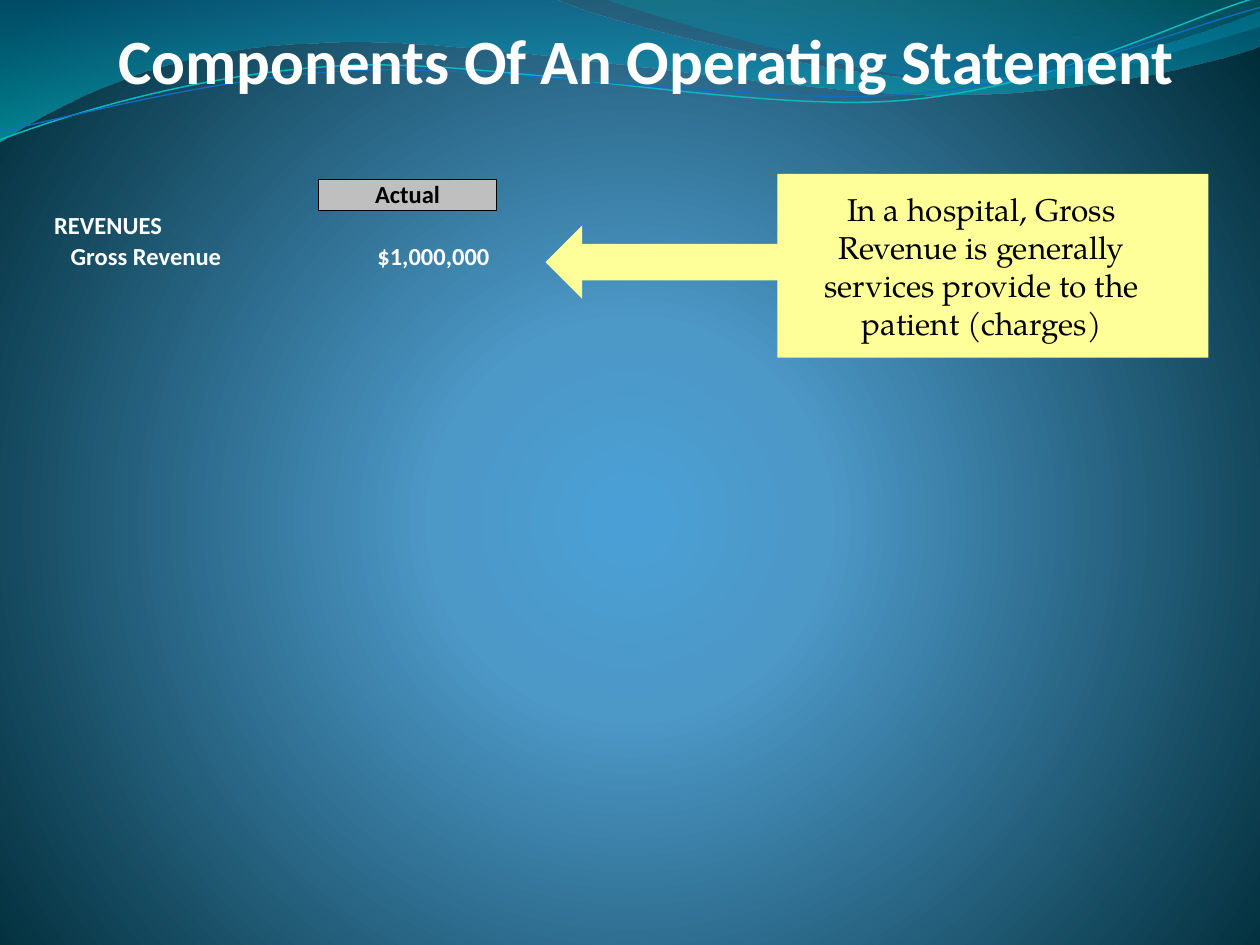
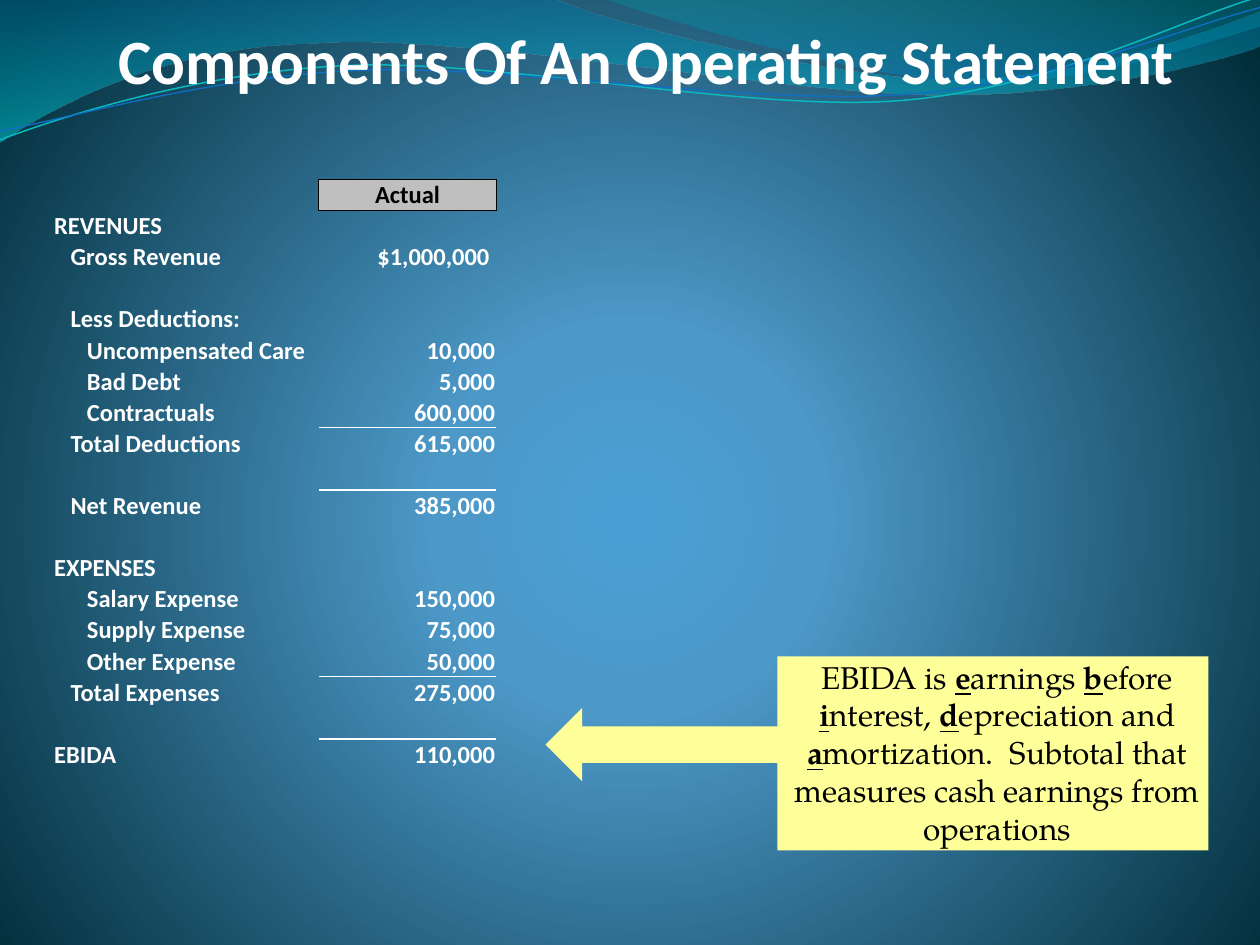
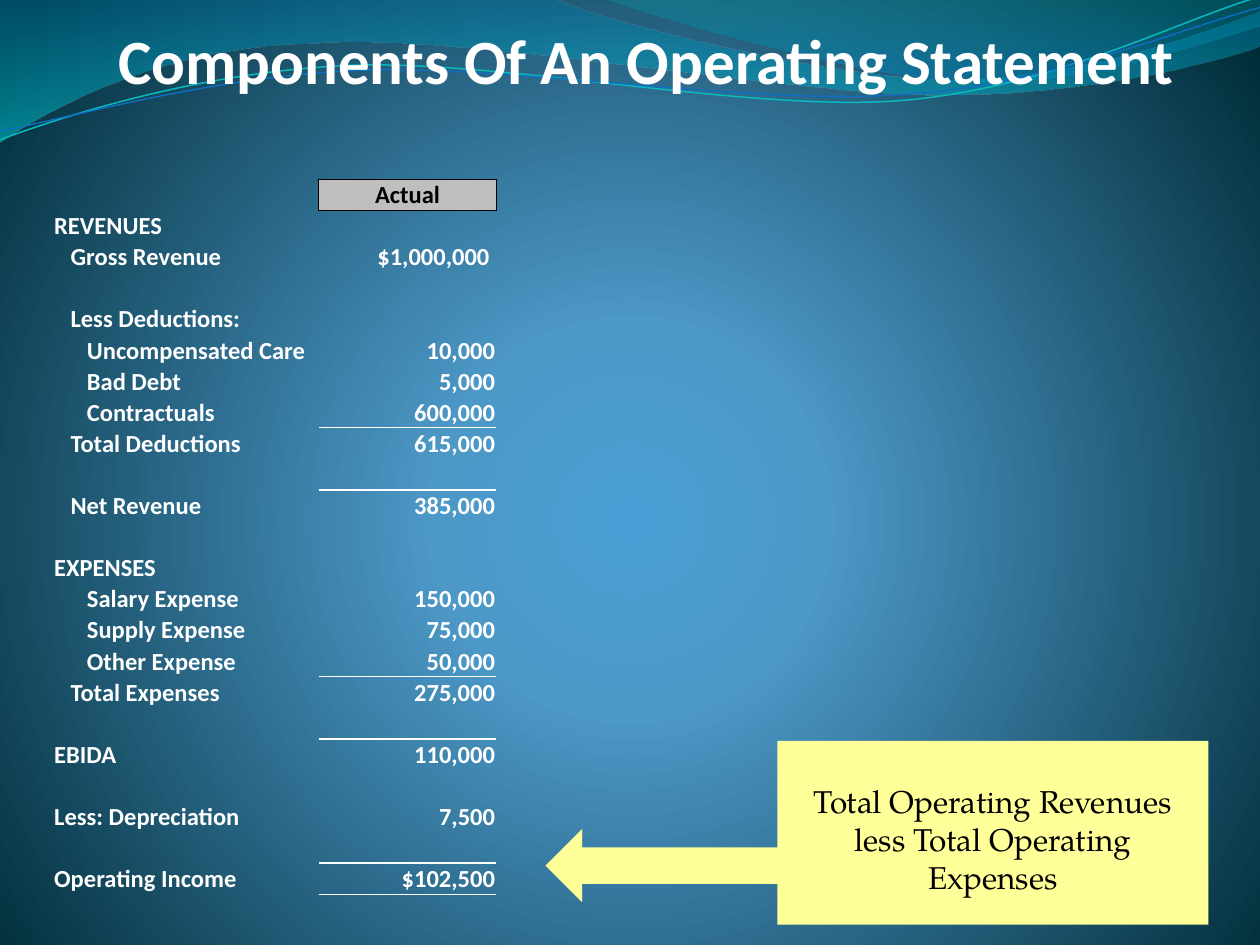
import pptx
import pptx.util
import pptx.oxml
import pptx.oxml.ns
import pptx.dml.color
import pptx.enum.shapes
import pptx.enum.text
import lxml.etree
from dataclasses import dataclass

Inches = pptx.util.Inches
Align = pptx.enum.text.PP_ALIGN
Anchor = pptx.enum.text.MSO_ANCHOR
Preset = pptx.enum.shapes.MSO_SHAPE
qn = pptx.oxml.ns.qn


@dataclass(frozen=True)
class Theme:
    light: str = "FFFFFF"
    dark: str = "000000"
    header: str = "BFBFBF"
    callout: str = "FFFF99"
    sans: str = "Calibri"
    serif: str = "TeX Gyre Pagella"
    title_size: int = 36
    table_size: int = 14
    callout_size: int = 18
    backdrop: tuple = ((0, "4AA0D6", 100), (25, "4C98C7", 100), (100, "002C38", 100))
    left_wave: tuple = ((0, "0074A1", 45), (100, "00C6CF", 55))
    right_wave: tuple = ((0, "00A1A9", 30), (80, "008BBF", 45))
    upper_line: str = "0AB8BF"
    lower_line: str = "0F6FC6"


THEME = Theme()
TITLE = "Components Of An Operating Statement"

STATEMENT = [
    (0, "REVENUES", "", ""),
    (1, "Gross Revenue", "$1,000,000 ", ""),
    (0, "", "", ""),
    (1, "Less Deductions:", "", ""),
    (2, "Uncompensated Care", "10,000", ""),
    (2, "Bad Debt", "5,000", ""),
    (2, "Contractuals", "600,000", ""),
    (1, "Total Deductions", "615,000", "T"),
    (0, "", "", ""),
    (1, "Net Revenue", "385,000", "T"),
    (0, "", "", ""),
    (0, "EXPENSES", "", ""),
    (2, "Salary Expense", "150,000", ""),
    (2, "Supply Expense", "75,000", ""),
    (2, "Other Expense", "50,000", ""),
    (1, "Total Expenses", "275,000", "T"),
    (0, "", "", ""),
    (0, "EBIDA", "110,000", "T"),
    (0, "", "", ""),
    (0, "Less: Depreciation", "7,500", ""),
    (0, "", "", ""),
    (0, "Operating Income", "$102,500", "TB"),
]

SLIDES = [
    dict(last="Gross Revenue", arrow_top=1.79, panel=(1.38, 1.46), note=(6.33, 1.46, 2.92, 1.31),
         text="In a hospital, Gross Revenue is generally services provide to the patient (charges)"),
    dict(last="EBIDA", arrow_top=5.62, panel=(5.21, 1.54), note=(6.08, 5.17, 3.67, 1.62),
         text="EBIDA is _e_arnings _b_efore _i_nterest, _d_epreciation and _a_mortization.  "
              "Subtotal that measures cash earnings from operations"),
    dict(last="Operating Income", arrow_top=6.58, panel=(5.88, 1.46), note=(6.17, 6.16, 3.42, 0.71),
         text="Total Operating Revenues less Total Operating Expenses"),
]

LEFT_WAVE = [
    [(0, 0)], [(4.4, -0.01)],
    [(4.76, 0.17), (6.64, 0.63), (7.58, 0.63)], [(8.53, 0.63), (9.58, 0.26), (10, 0.09)],
    [(10.01, 0.36)],
    [(9.83, 0.44), (8.7, 0.76), (7.46, 0.75)], [(6.22, 0.75), (3.82, 0.28), (2.57, 0.34)],
    [(1.29, 0.36), (0.46, 0.83), (-0.01, 1.13)],
]
RIGHT_WAVE = [
    [(4.79, -0.01)],
    [(5.09, 0.11), (6.82, 0.62), (7.69, 0.65)], [(8.56, 0.69), (9.61, 0.32), (10, 0.21)],
    [(10, 0)],
]
UPPER_LINE = [
    [(0, 1.11)],
    [(0.48, 0.93), (1.58, 0.57), (2.77, 0.52)], [(3.95, 0.47), (5.93, 0.89), (7.13, 0.8)],
    [(8.33, 0.71), (9.38, 0.15), (9.98, -0.02)],
]
LOWER_LINE = [
    [(0, 1.04)],
    [(0.47, 0.96), (1.64, 0.61), (2.83, 0.56)], [(4.03, 0.51), (5.97, 0.84), (7.17, 0.75)],
    [(8.36, 0.67), (9.41, 0.21), (10, 0.06)],
]

TABLE_LEFT, TABLE_TOP = 0.42, 1.42
COLUMN_WIDTHS = (2.11, 1.41)
ROW_HEIGHT = pptx.util.Pt(17.8)
CELL_MARGIN = 0.01
LEVEL_INDENT = 0.13
PLAIN_TABLE = "{2D5ABB26-0587-4C30-8999-92F81FD0307C}"


def rgb(code):
    return pptx.dml.color.RGBColor.from_string(code)


def drawing(markup):
    return pptx.oxml.parse_xml(markup.replace(">", " " + pptx.oxml.ns.nsdecls("a") + ">", 1))


def set_gradient(fill, properties, stops, direction):
    fill.solid()
    marks = ""
    for place, color, opacity in stops:
        alpha = f'<a:alpha val="{opacity * 1000}"/>' if opacity < 100 else ""
        marks += f'<a:gs pos="{place * 1000}"><a:srgbClr val="{color}">{alpha}</a:srgbClr></a:gs>'
    gradient = drawing(f'<a:gradFill rotWithShape="1"><a:gsLst>{marks}</a:gsLst>{direction}</a:gradFill>')
    properties.replace(properties.find(qn("a:solidFill")), gradient)


def style(paragraph, font, size, color, bold=False, align=Align.LEFT):
    paragraph.alignment = align
    paragraph.font.name = font
    paragraph.font.size = pptx.util.Pt(size)
    paragraph.font.bold = bold
    paragraph.font.color.rgb = rgb(color)


def add_outline(page, segments, close):
    points = [(Inches(x), Inches(y)) for segment in segments for x, y in segment]
    builder = page.shapes.build_freeform(*points[0])
    builder.add_line_segments(points[1:], close=close)
    shape = builder.convert_to_shape()
    shape.shadow.inherit = False
    steps = iter(list(shape._element.iter(qn("a:lnTo"))))
    for segment in segments[1:]:
        group = [next(steps) for _ in segment]
        if len(group) == 3:
            curve = lxml.etree.Element(qn("a:cubicBezTo"))
            group[0].addprevious(curve)
            for step in group:
                curve.append(step[0])
                step.getparent().remove(step)
    return shape


def add_waves(page):
    for segments, stops in ((LEFT_WAVE, THEME.left_wave), (RIGHT_WAVE, THEME.right_wave)):
        wave = add_outline(page, segments, True)
        wave.line.fill.background()
        set_gradient(wave.fill, wave._element.spPr, stops, '<a:lin ang="5400000" scaled="0"/>')
    for segments, color, width in ((UPPER_LINE, THEME.upper_line, 0.85), (LOWER_LINE, THEME.lower_line, 0.75)):
        line = add_outline(page, segments, False)
        line.fill.background()
        line.line.color.rgb = rgb(color)
        line.line.width = pptx.util.Pt(width)


def add_text_box(page, left, top, width, height):
    box = page.shapes.add_textbox(Inches(left), Inches(top), Inches(width), Inches(height))
    box.text_frame.word_wrap = True
    return box.text_frame


def add_title(page):
    frame = add_text_box(page, -1.14, -0.25, 12.56, 1.02)
    frame.vertical_anchor = Anchor.BOTTOM
    frame.margin_left = frame.margin_top = frame.margin_bottom = 0
    frame.margin_right = Inches(0.02)
    frame.text = TITLE
    style(frame.paragraphs[0], THEME.sans, THEME.title_size, THEME.light, True, Align.CENTER)


def set_cell(cell, text, color, align, level=0):
    cell.margin_left = Inches(CELL_MARGIN + level * LEVEL_INDENT)
    cell.margin_right = cell.margin_top = Inches(CELL_MARGIN)
    cell.margin_bottom = 0
    cell.vertical_anchor = Anchor.BOTTOM
    cell.fill.background()
    cell.text = text
    style(cell.text_frame.paragraphs[0], THEME.sans, THEME.table_size, color, True, align)


def rule_cell(cell, rules):
    properties = cell._tc.get_or_add_tcPr()
    for place, edge in enumerate("LRTB"):
        if edge in rules:
            color, width = rules[edge]
            border = (f'<a:ln{edge} w="{pptx.util.Pt(width)}"><a:solidFill><a:srgbClr val="{color}"/>'
                      f'</a:solidFill></a:ln{edge}>')
        else:
            border = f'<a:ln{edge} w="0"><a:noFill/></a:ln{edge}>'
        properties.insert(place, drawing(border))


def add_statement(page, last):
    labels = [label for _, label, _, _ in STATEMENT]
    rows = STATEMENT[:labels.index(last) + 1]
    count = len(rows) + 1
    frame = page.shapes.add_table(
        count, 2, Inches(TABLE_LEFT), Inches(TABLE_TOP),
        Inches(sum(COLUMN_WIDTHS)), ROW_HEIGHT * count)
    table = frame.table
    table.first_row = table.horz_banding = False
    table._tbl.tblPr.find(qn("a:tableStyleId")).text = PLAIN_TABLE
    for column, width in zip(table.columns, COLUMN_WIDTHS):
        column.width = Inches(width)
    for row in table.rows:
        row.height = ROW_HEIGHT

    frame_rule, total_rule = (THEME.dark, 0.5), (THEME.light, 1)
    corner, header = table.cell(0, 0), table.cell(0, 1)
    set_cell(corner, "", THEME.light, Align.LEFT)
    rule_cell(corner, {"R": frame_rule})
    set_cell(header, "Actual", THEME.dark, Align.CENTER)
    header.fill.solid()
    header.fill.fore_color.rgb = rgb(THEME.header)
    rule_cell(header, dict.fromkeys("LRTB", frame_rule))

    following = [edges for _, _, _, edges in rows[1:]] + [""]
    for number, ((level, label, amount, edges), below) in enumerate(zip(rows, following), 1):
        name_cell, amount_cell = table.cell(number, 0), table.cell(number, 1)
        set_cell(name_cell, label, THEME.light, Align.LEFT, level)
        rule_cell(name_cell, {})
        set_cell(amount_cell, amount, THEME.light, Align.RIGHT)
        rules = dict.fromkeys(edges + ("B" if "T" in below else ""), total_rule)
        if number == 1:
            rules["T"] = frame_rule
        rule_cell(amount_cell, rules)


def add_callout(page, arrow_top, panel, note, text):
    panel_top, panel_height = panel
    for preset, left, top, width, height in (
            (Preset.LEFT_ARROW, 4.33, arrow_top, 2.08, 0.58),
            (Preset.RECTANGLE, 6.17, panel_top, 3.42, panel_height)):
        shape = page.shapes.add_shape(preset, Inches(left), Inches(top), Inches(width), Inches(height))
        shape.shadow.inherit = False
        shape.fill.solid()
        shape.fill.fore_color.rgb = rgb(THEME.callout)
        shape.line.fill.background()

    frame = add_text_box(page, *note)
    frame.auto_size = pptx.enum.text.MSO_AUTO_SIZE.SHAPE_TO_FIT_TEXT
    para = frame.paragraphs[0]
    style(para, THEME.serif, THEME.callout_size, THEME.dark, align=Align.CENTER)
    for number, part in enumerate(text.split("_")):
        span = para.add_run()
        span.text = part
        if number % 2:
            span.font.bold = span.font.underline = True


def main():
    deck = pptx.Presentation()
    deck.slide_width, deck.slide_height = Inches(10), Inches(7.5)
    master = deck.slide_master
    fill = master.background.fill
    set_gradient(
        fill, master._element.cSld.bg.bgPr, THEME.backdrop,
        '<a:path path="circle"><a:fillToRect l="10000" t="110000" r="10000" b="100000"/></a:path>')
    for content in SLIDES:
        page = deck.slides.add_slide(deck.slide_layouts[6])
        add_waves(page)
        add_title(page)
        add_statement(page, content["last"])
        add_callout(page, content["arrow_top"], content["panel"], content["note"], content["text"])
    deck.save("out.pptx")


if __name__ == "__main__":
    main()
